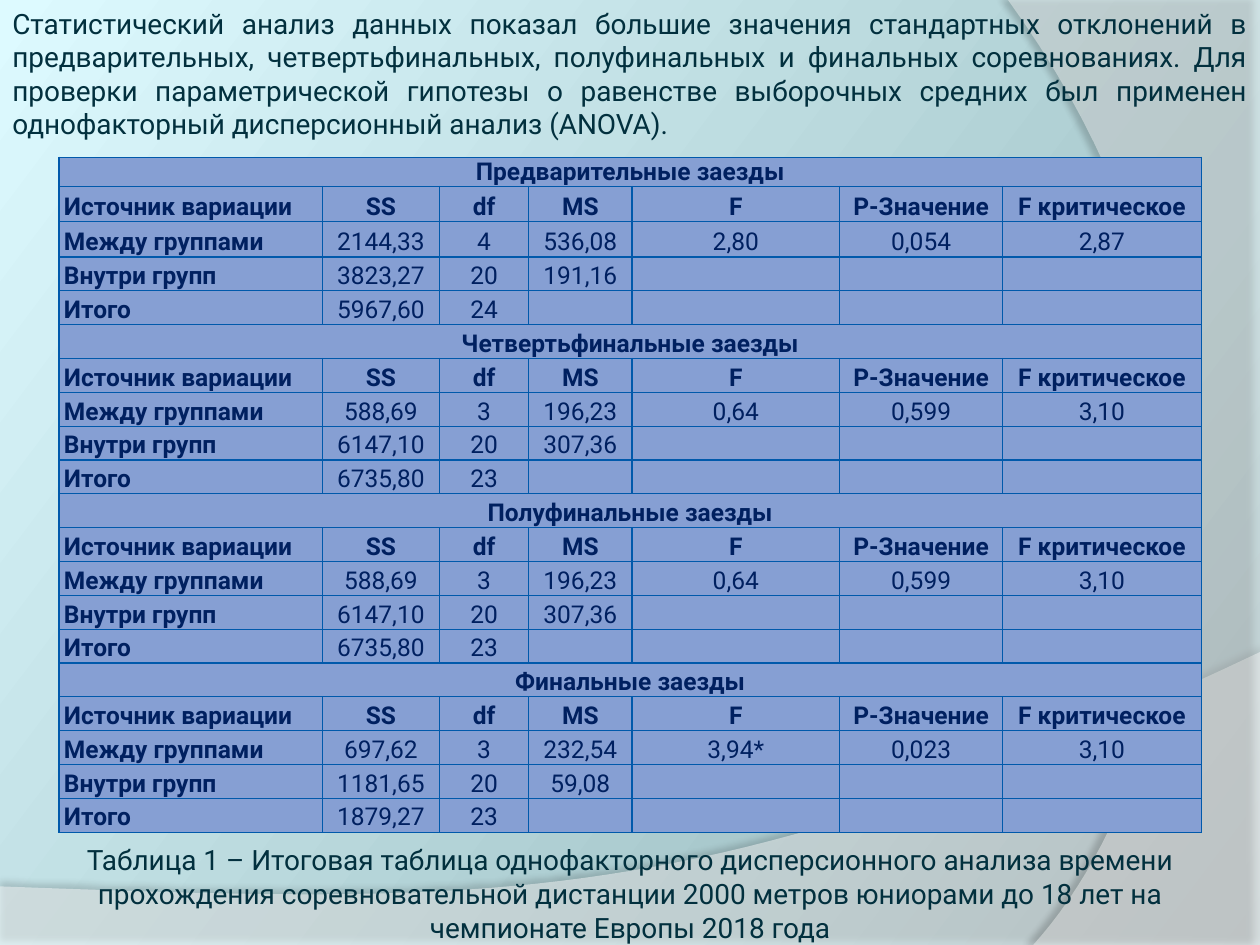
from copy import deepcopy

from lxml.etree import SubElement
from pptx import Presentation
from pptx.dml.color import RGBColor
from pptx.enum.text import MSO_ANCHOR, PP_ALIGN
from pptx.oxml.ns import qn
from pptx.util import Cm, Pt

WHITE = RGBColor(0xFF, 0xFF, 0xFF)
BLACK = RGBColor(0, 0, 0)
TEAL = RGBColor(0x02, 0x30, 0x3E)
NAVY = RGBColor(0x00, 0x20, 0x60)
RULE = RGBColor(0x00, 0x59, 0xAB)
PANEL = RGBColor(0x86, 0x9F, 0xD3)
SKY = [
    (0, RGBColor(0x8E, 0xA8, 0xAC)),
    (0.3, RGBColor(0xA9, 0xC9, 0xCD)),
    (1, RGBColor(0xDD, 0xFA, 0xFF)),
]

INTRO = (
    "Статистический анализ данных показал большие значения стандартных "
    "отклонений в предварительных, четвертьфинальных, полуфинальных и "
    "финальных соревнованиях. Для проверки параметрической гипотезы о "
    "равенстве выборочных средних был применен однофакторный "
    "дисперсионный анализ (ANOVA)."
)
TITLE = (
    "Таблица 1 – Итоговая таблица однофакторного дисперсионного анализа "
    "времени прохождения соревновательной дистанции 2000 метров юниорами "
    "до 18 лет на чемпионате Европы 2018 года"
)
HEADS = ["Источник вариации", "SS", "df", "MS", "F", "P-Значение", "F критическое"]
NAMES = ["Между группами", "Внутри групп", "Итого"]
MIDDLE = [
    ["588,69", "3", "196,23", "0,64", "0,599", "3,10"],
    ["6147,10", "20", "307,36"],
    ["6735,80", "23"],
]
STAGES = {
    "Предварительные заезды": [
        ["2144,33", "4", "536,08", "2,80", "0,054", "2,87"],
        ["3823,27", "20", "191,16"],
        ["5967,60", "24"],
    ],
    "Четвертьфинальные заезды": MIDDLE,
    "Полуфинальные заезды": MIDDLE,
    "Финальные заезды": [
        ["697,62", "3", "232,54", "3,94*", "0,023", "3,10"],
        ["1181,65", "20", "59,08"],
        ["1879,27", "23"],
    ],
}
WIDTHS = [5.31, 2.36, 1.8, 2.08, 4.19, 3.28, 4.01]


def write(frame, text, size=16, color=TEAL, bold=False, align=PP_ALIGN.CENTER,
          space=None, after=None):
    """Put one formatted paragraph into a text frame."""
    para = frame.paragraphs[0]
    para.alignment = align
    para.line_spacing = space
    para.space_after = after
    if not text:
        SubElement(para._p, qn("a:endParaRPr"), sz=str(size * 100))
        return
    run = para.add_run()
    run.text = text
    font = run.font
    font.name, font.size, font.bold = "Roboto", Pt(size), bold
    font.color.rgb = color


def add_text(slide, box, text, **form):
    """Place a wrapped text box."""
    frame = slide.shapes.add_textbox(*map(Cm, box)).text_frame
    frame.word_wrap = True
    write(frame, text, **form)


def curve(a, b, c, d, steps=48):
    """List points along a cubic curve."""
    return [
        tuple((1 - t) ** 3 * p + 3 * (1 - t) ** 2 * t * q
              + 3 * (1 - t) * t ** 2 * r + t ** 3 * s
              for p, q, r, s in zip(a, b, c, d))
        for t in (i / steps for i in range(steps + 1))
    ]


def add_wave(slide, box, edge, ends, alpha, shade, gap, angle):
    """Draw a translucent wave whose points are fractions of its box."""
    left, top, width, height = box
    spots = [(Cm(left + x * width), Cm(top + y * height))
             for x, y in ends + curve(*edge)]
    pen = slide.shapes.build_freeform(*spots[0])
    pen.add_line_segments(spots[1:], close=True)
    wave = pen.convert_to_shape()
    wave.line.fill.background()
    wave.fill.solid()
    wave.fill.fore_color.rgb = WHITE
    props = wave._element.spPr
    tint = props.find(qn("a:solidFill")).find(qn("a:srgbClr"))
    SubElement(tint, qn("a:alpha"), val=str(alpha * 1000))
    list_ = SubElement(props, qn("a:effectLst"))
    glow = SubElement(list_, qn("a:outerShdw"), blurRad=str(Pt(4)),
                      dist=str(Pt(gap)), dir=str(angle * 60000),
                      algn="ctr", rotWithShape="0")
    dark = SubElement(glow, qn("a:srgbClr"), val=str(BLACK))
    SubElement(dark, qn("a:alpha"), val=str(shade * 1000))


def add_back(slide, box):
    """Paint the gradient and the two waves."""
    left, top, width, height = box
    fill = slide.background.fill
    fill.gradient()
    fill.gradient_angle = 143
    stops = slide.element.find(".//" + qn("a:gsLst"))
    stops.insert(1, deepcopy(stops[0]))
    for stop, (place, color) in zip(fill.gradient_stops, SKY):
        stop.position = place
        stop.color.rgb = color
    low = 0.69 * height
    add_wave(slide, (left, top + low, width, height - low),
             [(1, 0), (0.56, 0.9), (0.39, 0.86), (0, 0.8)],
             [(0, 1), (1, 1)], 45, 35, 3.5, 270)
    add_wave(slide, (left + 0.8 * width, top, 0.2 * width, height),
             [(0.1, 1), (0.68, 0.83), (1.09, 0.4), (0, 0)],
             [(1, 0), (1, 1)], 40, 45, 4, 180)


def style_cell(cell, text, **form):
    """Give a cell its borders, fill, margins and text."""
    props = cell._tc.get_or_add_tcPr()
    for side in ("lnL", "lnR", "lnT", "lnB"):
        line = SubElement(props, qn("a:" + side), w=str(Pt(0.75)))
        paint = SubElement(line, qn("a:solidFill"))
        SubElement(paint, qn("a:srgbClr"), val=str(RULE))
    cell.fill.solid()
    cell.fill.fore_color.rgb = PANEL
    cell.vertical_anchor = MSO_ANCHOR.BOTTOM
    cell.margin_left = cell.margin_right = Cm(0.1)
    cell.margin_top = cell.margin_bottom = 0
    write(cell.text_frame, text, size=14, color=NAVY, after=Pt(10), **form)


def add_grid(slide, box):
    """Build the variance table, one block of five rows per stage."""
    rows = []
    for stage, data in STAGES.items():
        rows += [[stage], HEADS]
        rows += [[name] + nums for name, nums in zip(NAMES, data)]
    table = slide.shapes.add_table(len(rows), len(HEADS), *map(Cm, box)).table
    table.first_row = table.horz_banding = False
    for col, width in zip(table.columns, WIDTHS):
        col.width = Cm(width)
    for i, row in enumerate(rows):
        table.rows[i].height = Cm({0: 0.59, 1: 0.71, 2: 0.71}.get(i, 0.68))
        kind = i % 5
        for j in range(len(HEADS)):
            style_cell(
                table.cell(i, j), row[j] if j < len(row) else "",
                bold=kind < 2 or j == 0,
                align=PP_ALIGN.LEFT if kind and j == 0 else PP_ALIGN.CENTER,
                space=Pt(12) if i < 3 else 1.15)
        if kind == 0:
            table.cell(i, 0).merge(table.cell(i, len(HEADS) - 1))


def main():
    """Build and save the slide."""
    deck = Presentation()
    deck.slide_width, deck.slide_height = Cm(25.4), Cm(19.05)
    slide = deck.slides.add_slide(deck.slide_layouts[6])
    add_back(slide, (0, 0, 25.4, 19.05))
    add_text(slide, (0, 0, 25.4, 3.76), INTRO, align=PP_ALIGN.JUSTIFY)
    add_grid(slide, (1.19, 3.17, 23.03, 13.59))
    add_text(slide, (1.19, 16.87, 23.03, 3.07), TITLE)
    deck.save("out.pptx")


if __name__ == "__main__":
    main()
